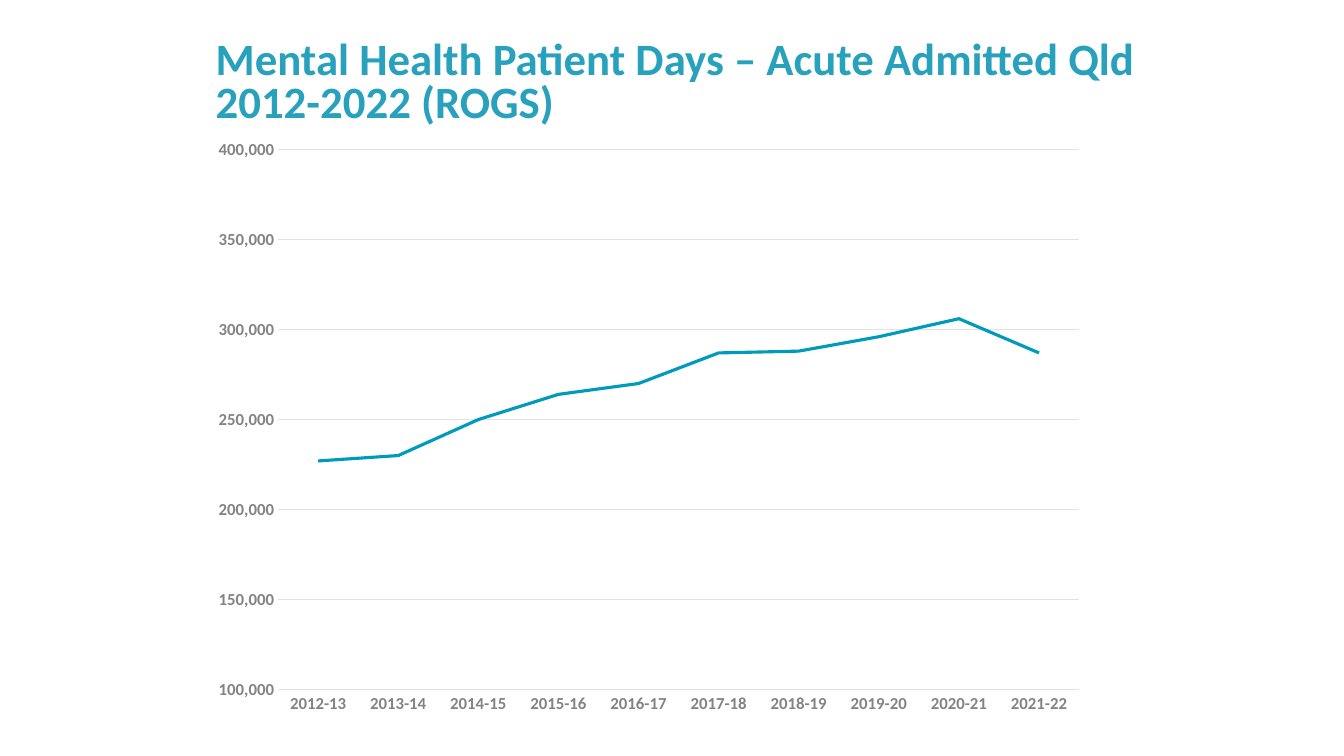
from dataclasses import dataclass

from lxml import etree
from pptx import Presentation
from pptx.chart.data import CategoryChartData
from pptx.dml.color import RGBColor
from pptx.enum.chart import XL_CHART_TYPE, XL_TICK_MARK
from pptx.enum.text import MSO_ANCHOR, MSO_AUTO_SIZE, PP_ALIGN
from pptx.oxml.ns import qn
from pptx.util import Cm, Pt

LINE_CHART = XL_CHART_TYPE.LINE
NO_TICKS = XL_TICK_MARK.NONE
MIDDLE = MSO_ANCHOR.MIDDLE
NO_AUTOFIT = MSO_AUTO_SIZE.NONE
LEFT = PP_ALIGN.LEFT

TITLE = "Mental Health Patient Days – Acute Admitted Qld 2012-2022 (ROGS)"
SERIES_NAME = "Series 1"
PATIENT_DAYS = {
    "2012-13": 227000,
    "2013-14": 230000,
    "2014-15": 250000,
    "2015-16": 264000,
    "2016-17": 270000,
    "2017-18": 287000,
    "2018-19": 288000,
    "2019-20": 296000,
    "2020-21": 306000,
    "2021-22": 287000,
}
AXIS_RANGE = (100000, 400000, 50000)
NUMBER_FORMAT = "#,##0;\\-#,##0;\\–;@"

PAGE_SIZE = (Cm(33.87), Cm(19.05))
TITLE_BOX = (Cm(5.18), Cm(0.84), Cm(24.51), Cm(2.57))
CHART_BOX = (Cm(5.18), Cm(3.15), Cm(22.58), Cm(15.06))
PLOT_AREA = {"x": 0.081, "y": 0.041, "w": 0.894, "h": 0.904}


@dataclass(frozen=True)
class Theme:
    font: str = "Calibri"
    title: RGBColor = RGBColor(0x28, 0xA1, 0xBD)
    series: RGBColor = RGBColor(0x00, 0x9A, 0xBC)
    label: RGBColor = RGBColor(0x84, 0x82, 0x84)
    chart_text: RGBColor = RGBColor(0x41, 0x40, 0x41)
    grid: RGBColor = RGBColor(0xE3, 0xE2, 0xE3)
    title_size: Pt = Pt(32)
    label_size: Pt = Pt(12)
    chart_size: Pt = Pt(10)
    grid_width: Pt = Pt(0.75)
    series_width: Pt = Pt(2.25)


THEME = Theme()


def set_font(font, size, color):
    font.name = THEME.font
    font.size = size
    font.bold = True
    font.color.rgb = color


def set_line(line, color, width):
    line.color.rgb = color
    line.width = width


def add_title(page):
    box = page.shapes.title
    box.left, box.top, box.width, box.height = TITLE_BOX
    frame = box.text_frame
    frame.text = TITLE
    frame.word_wrap = True
    frame.auto_size = NO_AUTOFIT
    frame.vertical_anchor = MIDDLE
    para = frame.paragraphs[0]
    para.alignment = LEFT
    para.line_spacing = 0.8
    set_font(para.runs[0].font, THEME.title_size, THEME.title)


def place_plot(chart):
    plot_area = chart._chartSpace.chart.plotArea
    for old_layout in plot_area.findall(qn("c:layout")):
        plot_area.remove(old_layout)
    layout = etree.Element(qn("c:layout"))
    plot_area.insert(0, layout)
    manual = etree.SubElement(layout, qn("c:manualLayout"))
    settings = {"layoutTarget": "inner", "xMode": "edge", "yMode": "edge", **PLOT_AREA}
    for name, value in settings.items():
        etree.SubElement(manual, qn(f"c:{name}")).set("val", str(value))


def add_patient_days(page):
    data = CategoryChartData(number_format=NUMBER_FORMAT)
    data.categories = list(PATIENT_DAYS)
    data.add_series(SERIES_NAME, list(PATIENT_DAYS.values()))
    chart = page.shapes.add_chart(LINE_CHART, *CHART_BOX, data).chart
    chart.has_title = False
    chart.has_legend = False
    set_font(chart.font, THEME.chart_size, THEME.chart_text)
    place_plot(chart)

    plot = chart.plots[0]
    plot.vary_by_categories = False
    series = plot.series[0]
    series.smooth = False
    set_line(series.format.line, THEME.series, THEME.series_width)

    years, days = chart.category_axis, chart.value_axis
    for axis in (years, days):
        axis.major_tick_mark = NO_TICKS
        axis.minor_tick_mark = NO_TICKS
        set_font(axis.tick_labels.font, THEME.label_size, THEME.label)
    set_line(years.format.line, THEME.grid, THEME.grid_width)
    days.format.line.fill.background()
    days.minimum_scale, days.maximum_scale, days.major_unit = AXIS_RANGE
    days.has_major_gridlines = True
    set_line(days.major_gridlines.format.line, THEME.grid, THEME.grid_width)
    days.tick_labels.number_format = NUMBER_FORMAT
    days.tick_labels.number_format_is_linked = False


def main():
    deck = Presentation()
    deck.slide_width, deck.slide_height = PAGE_SIZE
    page = deck.slides.add_slide(deck.slide_layouts.get_by_name("Title Only"))
    add_patient_days(page)
    add_title(page)
    deck.save("out.pptx")


if __name__ == "__main__":
    main()
